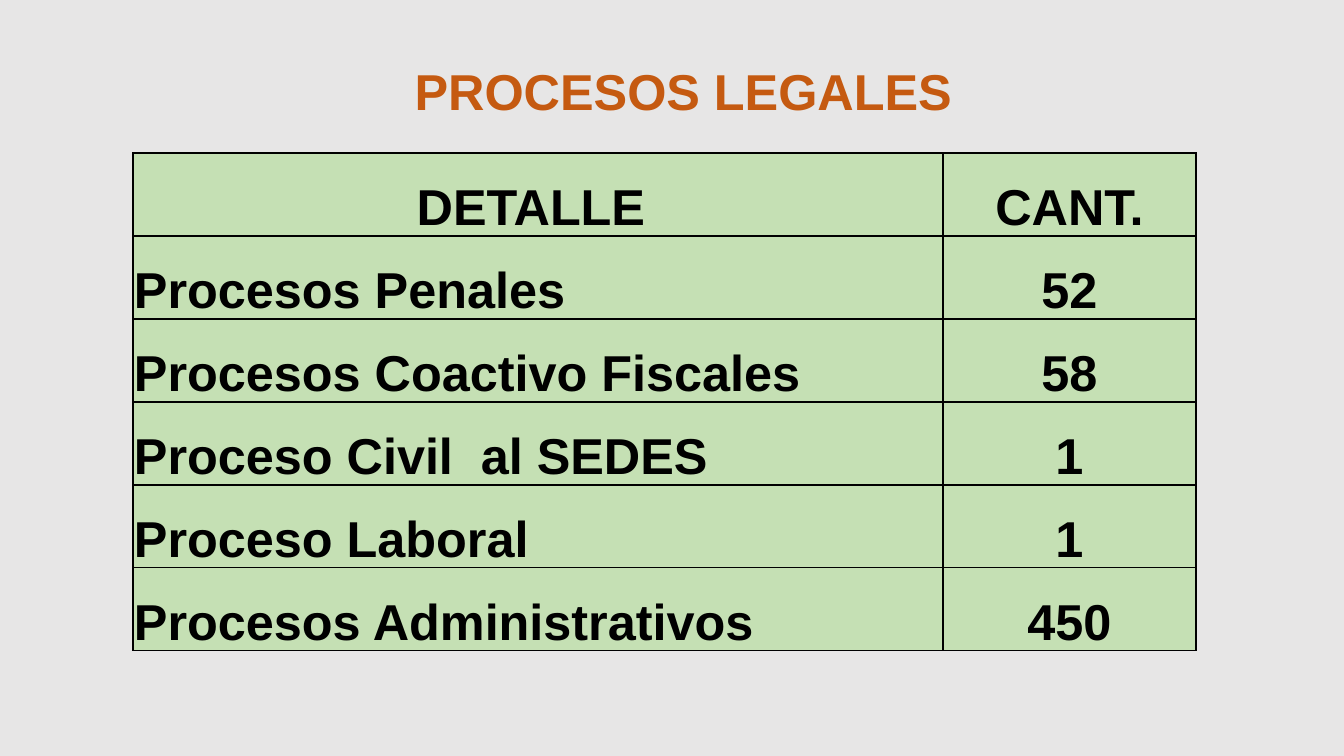
import pptx
import pptx.util
import pptx.dml.color
import pptx.enum.text
import pptx.oxml
import pptx.oxml.ns

EMU_PER_PX = 914400 / 100.8

BACKGROUND = pptx.dml.color.RGBColor(0xE7, 0xE6, 0xE6)
ORANGE = pptx.dml.color.RGBColor(0xC5, 0x5A, 0x11)
GREEN = pptx.dml.color.RGBColor(0xC5, 0xE0, 0xB4)
BLACK = pptx.dml.color.RGBColor(0, 0, 0)

CENTER = pptx.enum.text.PP_ALIGN.CENTER
LEFT = pptx.enum.text.PP_ALIGN.LEFT

HEADING_FORMAT = {"name": "Arial", "size": pptx.util.Pt(36), "bold": True}
COLUMN_WIDTHS = (810, 253)
ROW_HEIGHT = 83
PROCESSES = (
    ("DETALLE ", "CANT."),
    ("Procesos Penales", "52"),
    ("Procesos Coactivo Fiscales", "58"),
    ("Proceso Civil  al SEDES", "1"),
    ("Proceso Laboral", "1"),
    ("Procesos Administrativos", "450"),
)


def px(length):
    return pptx.util.Emu(round(length * EMU_PER_PX))


def set_attributes(target, values):
    for name, value in values.items():
        setattr(target, name, value)


def write_text(frame, text, color, alignment):
    paragraph = frame.paragraphs[0]
    paragraph.alignment = alignment
    run = paragraph.add_run()
    run.text = text
    set_attributes(run.font, HEADING_FORMAT)
    run.font.color.rgb = color


def add_title(slide, text, left, top, width, height):
    title = slide.shapes.title
    set_attributes(title, {"left": px(left), "top": px(top),
                           "width": px(width), "height": px(height)})
    set_attributes(title.text_frame, {
        "word_wrap": True,
        "auto_size": pptx.enum.text.MSO_AUTO_SIZE.NONE,
        "vertical_anchor": pptx.enum.text.MSO_ANCHOR.TOP,
    })
    write_text(title.text_frame, text, ORANGE, CENTER)


def add_borders(cell):
    """Draw a thin line on all four sides, ahead of the cell's fill."""
    properties = cell._tc.get_or_add_tcPr()
    for position, side in enumerate(("lnL", "lnR", "lnT", "lnB")):
        properties.insert(position, pptx.oxml.parse_xml(
            f'<a:{side} {pptx.oxml.ns.nsdecls("a")} w="{pptx.util.Pt(1)}">'
            f'<a:solidFill><a:srgbClr val="{BLACK}"/></a:solidFill></a:{side}>'))


def format_cell(cell, text, alignment):
    set_attributes(cell, {
        "margin_left": px(1), "margin_right": px(1),
        "margin_top": px(1), "margin_bottom": 0,
        "vertical_anchor": pptx.enum.text.MSO_ANCHOR.BOTTOM,
    })
    cell.fill.solid()
    cell.fill.fore_color.rgb = GREEN
    add_borders(cell)
    write_text(cell.text_frame, text, BLACK, alignment)


def add_process_table(slide, left, top):
    table = slide.shapes.add_table(
        len(PROCESSES), len(COLUMN_WIDTHS), px(left), px(top),
        px(sum(COLUMN_WIDTHS)), px(ROW_HEIGHT * len(PROCESSES))).table
    for column, width in zip(table.columns, COLUMN_WIDTHS):
        column.width = px(width)
    for row_index, entries in enumerate(PROCESSES):
        table.rows[row_index].height = px(ROW_HEIGHT)
        for column_index, text in enumerate(entries):
            is_detail = row_index > 0 and column_index == 0
            format_cell(table.cell(row_index, column_index), text,
                        LEFT if is_detail else CENTER)


def main():
    deck = pptx.Presentation()
    set_attributes(deck, {"slide_width": px(1344), "slide_height": px(756)})
    slide = deck.slides.add_slide(deck.slide_layouts.get_by_name("Title Only"))
    slide.background.fill.solid()
    slide.background.fill.fore_color.rgb = BACKGROUND
    add_title(slide, "PROCESOS LEGALES ", 243, 55, 895, 72)
    add_process_table(slide, 133, 153)
    deck.save("out.pptx")


if __name__ == "__main__":
    main()
